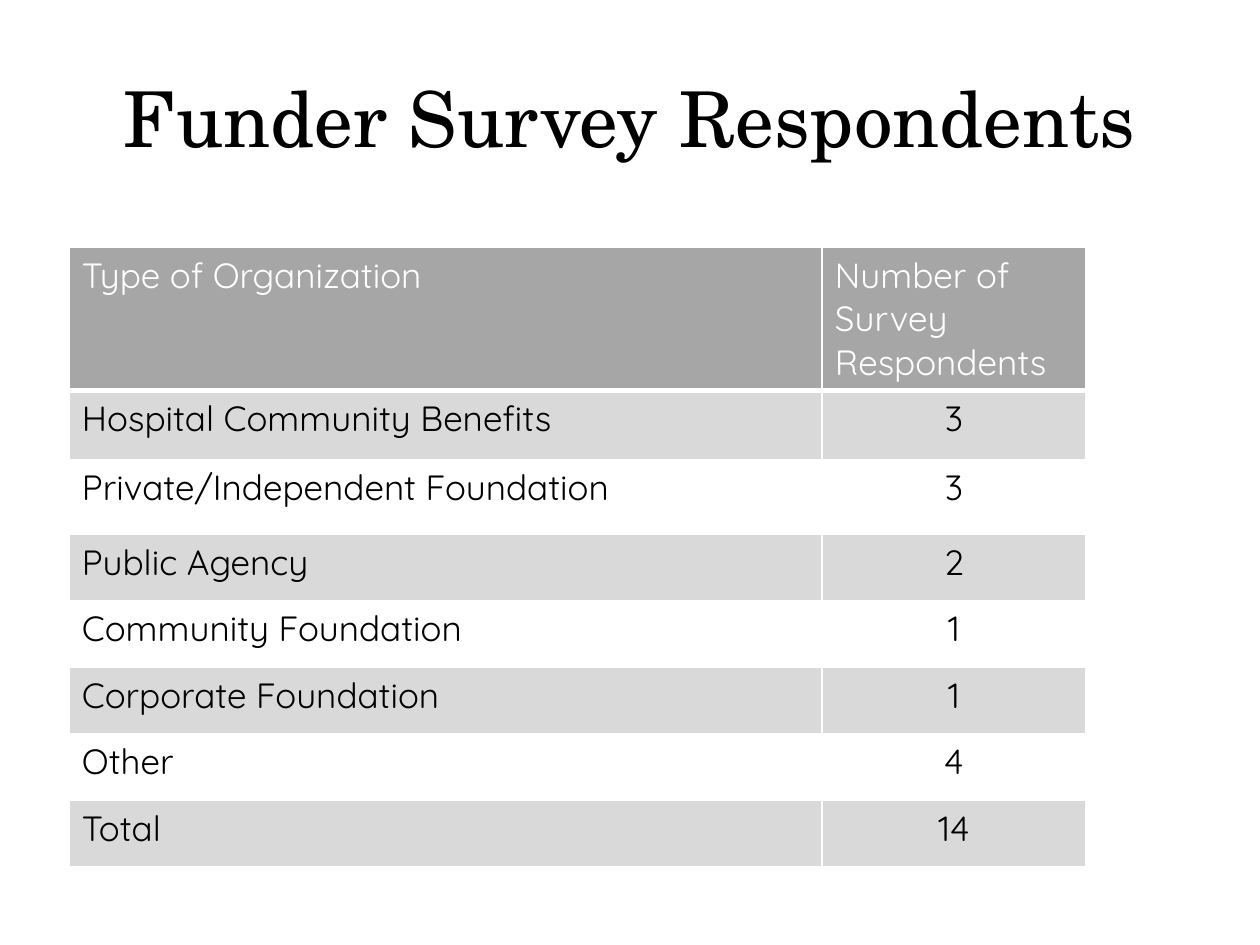
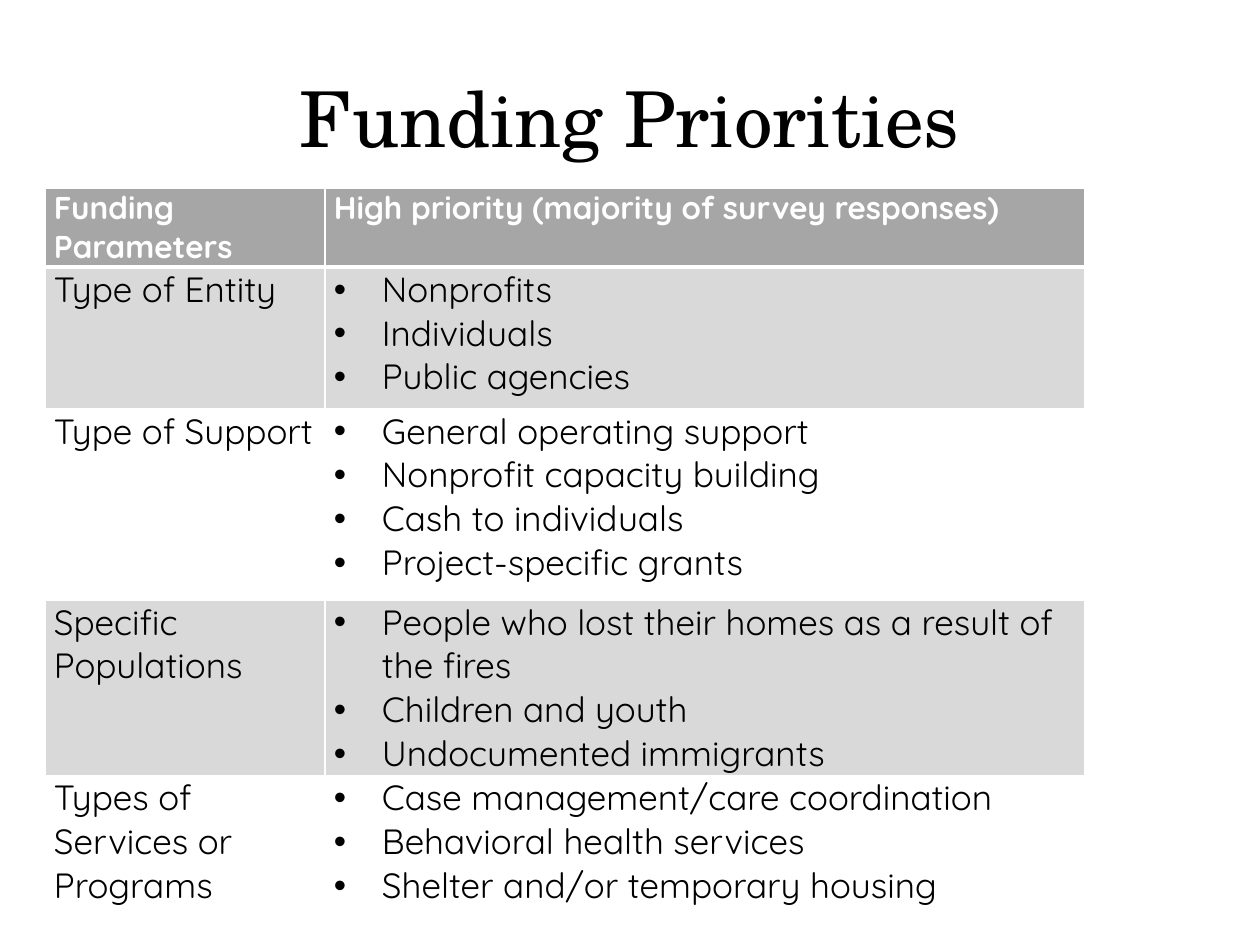
"""Build two slides of funder survey tables: respondents and funding priorities."""
import dataclasses

import pptx
import pptx.dml.color
import pptx.enum.text
import pptx.oxml
import pptx.oxml.ns
import pptx.util


@dataclasses.dataclass(frozen=True)
class Theme:
    title_font: str = "TeX Gyre Schola"
    body_font: str = "Quicksand"
    title_size: int = 44
    body_size: int = 20
    ink: str = "000000"
    paper: str = "FFFFFF"
    header: str = "A6A6A6"
    band: str = "D9D9D9"
    rule: int = 1
    header_rule: int = 3


theme = Theme()
rgb = pptx.dml.color.RGBColor.from_string
align = pptx.enum.text.PP_ALIGN
SCALE = 914400 / 126


def px(length):
    return pptx.util.Emu(round(length * SCALE))


def append_xml(parent, tag, attributes, content=""):
    namespace = pptx.oxml.ns.nsdecls("a")
    parent.append(pptx.oxml.parse_xml(f"<a:{tag} {namespace} {attributes}>{content}</a:{tag}>"))


sections = [
    {
        "title": "Funder Survey Respondents",
        "left": 69, "top": 247, "columns": [753, 264],
        "heights": [143, 69, 75, 66, 67, 66, 67, 66],
        "insets": (13, 6), "header_size": 20, "header_bold": False, "bulleted": False,
        "rows": [
            ("Type of Organization", ["Number of Survey Respondents"]),
            ("Hospital Community Benefits", ["3"]),
            ("Private/Independent Foundation", ["3"]),
            ("Public Agency", ["2"]),
            ("Community Foundation", ["1"]),
            ("Corporate Foundation", ["1"]),
            ("Other", ["4"]),
            ("Total", ["14"]),
        ],
    },
    {
        "title": "Funding Priorities",
        "left": 45, "top": 188, "columns": [280, 760],
        "heights": [78, 142, 191, 174, 133],
        "insets": (9, 0), "header_size": 18, "header_bold": True, "bulleted": True,
        "rows": [
            ("Funding Parameters", ["High priority (majority of survey responses)"]),
            ("Type of Entity", ["Nonprofits", "Individuals", "Public agencies"]),
            ("Type of Support", ["General operating support", "Nonprofit capacity building",
                                 "Cash to individuals", "Project-specific grants"]),
            ("Specific Populations", ["People who lost their homes as a result of the fires",
                                      "Children and youth", "Undocumented immigrants"]),
            ("Types of Services or Programs", ["Case management/care coordination",
                                               "Behavioral health services",
                                               "Shelter and/or temporary housing"]),
        ],
    },
]

deck = pptx.Presentation()
deck.slide_width, deck.slide_height = px(1260), px(945)

for section in sections:
    slide = deck.slides.add_slide(deck.slide_layouts[5])
    heading = slide.shapes.title
    heading.left, heading.top, heading.width, heading.height = px(63), px(38), px(1134), px(158)
    heading.text_frame.text = section["title"]
    heading.text_frame.vertical_anchor = pptx.enum.text.MSO_ANCHOR.MIDDLE
    heading_line = heading.text_frame.paragraphs[0]
    heading_line.alignment = align.CENTER
    heading_line.font.name = theme.title_font
    heading_line.font.size = pptx.util.Pt(theme.title_size)
    heading_line.font.color.rgb = rgb(theme.ink)

    rows, columns, heights = section["rows"], section["columns"], section["heights"]
    survey = slide.shapes.add_table(
        len(rows), len(columns), px(section["left"]), px(section["top"]),
        px(sum(columns)), px(sum(heights))).table
    survey.horz_banding = False
    for column, width in zip(survey.columns, columns):
        column.width = px(width)

    for row_number, (label, answers) in enumerate(rows):
        survey.rows[row_number].height = px(heights[row_number])
        is_header = row_number == 0
        fill = theme.header if is_header else theme.band if row_number % 2 else theme.paper
        for column_number, lines in enumerate([[label], answers]):
            cell = survey.cell(row_number, column_number)
            is_answer = column_number == 1 and not is_header
            cell.margin_left = cell.margin_right = px(section["insets"][0])
            cell.margin_top = cell.margin_bottom = px(section["insets"][1])
            for side in "LRTB":
                weight = theme.header_rule if is_header and side == "B" else theme.rule
                append_xml(cell._tc.get_or_add_tcPr(), f"ln{side}", f'w="{pptx.util.Pt(weight)}"',
                           f'<a:solidFill><a:srgbClr val="{theme.paper}"/></a:solidFill>')
            cell.fill.solid()
            cell.fill.fore_color.rgb = rgb(fill)
            cell.text_frame.text = "\n".join(lines)
            for paragraph in cell.text_frame.paragraphs:
                paragraph.font.name = theme.body_font
                paragraph.font.size = pptx.util.Pt(
                    section["header_size"] if is_header else theme.body_size)
                paragraph.font.bold = is_header and section["header_bold"]
                paragraph.font.color.rgb = rgb(theme.paper if is_header else theme.ink)
                if is_answer and section["bulleted"]:
                    properties = paragraph._p.get_or_add_pPr()
                    properties.set("marL", str(px(48)))
                    properties.set("indent", str(px(-48)))
                    bullet_font = pptx.oxml.parse_xml(
                        f'<a:buFont {pptx.oxml.ns.nsdecls("a")} typeface="Arial"/>')
                    properties.insert(0, bullet_font)
                    bullet_font.addnext(pptx.oxml.parse_xml(
                        f'<a:buChar {pptx.oxml.ns.nsdecls("a")} char="•"/>'))
                elif is_answer:
                    paragraph.alignment = align.CENTER

deck.save("out.pptx")
